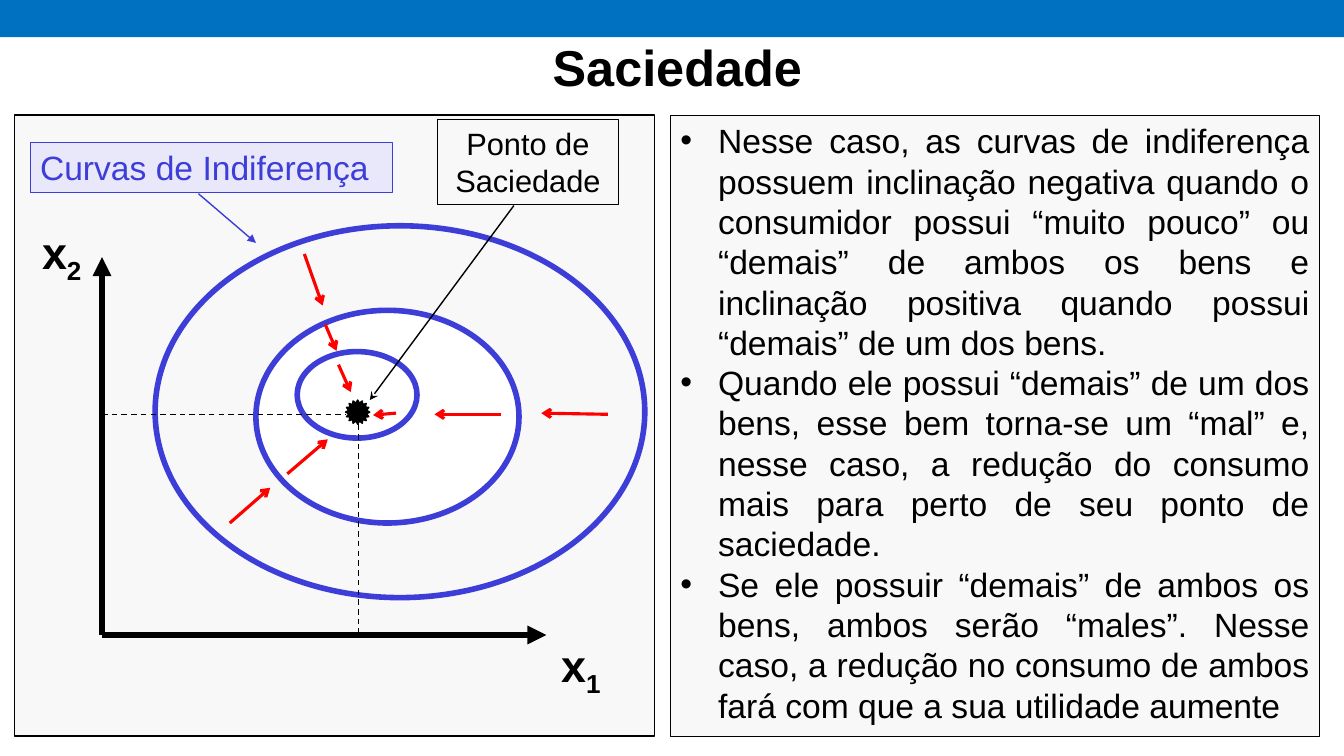
from dataclasses import dataclass

from lxml import etree
from pptx import Presentation
from pptx.dml.color import RGBColor
from pptx.enum.dml import MSO_LINE
from pptx.enum.shapes import MSO_CONNECTOR, MSO_SHAPE
from pptx.enum.text import MSO_ANCHOR, MSO_AUTO_SIZE, PP_ALIGN
from pptx.oxml.ns import qn
from pptx.util import Cm, Pt

RECT, OVAL, STAR = MSO_SHAPE.RECTANGLE, MSO_SHAPE.OVAL, MSO_SHAPE.STAR_16_POINT
STRAIGHT = MSO_CONNECTOR.STRAIGHT
DASH = MSO_LINE.DASH
TOP, MIDDLE, BOTTOM = MSO_ANCHOR.TOP, MSO_ANCHOR.MIDDLE, MSO_ANCHOR.BOTTOM
LEFT, CENTER, JUSTIFY = PP_ALIGN.LEFT, PP_ALIGN.CENTER, PP_ALIGN.JUSTIFY
FIXED = MSO_AUTO_SIZE.NONE


@dataclass(frozen=True)
class Theme:
    font: str = "Arial"
    ink: str = "000000"
    white: str = "FFFFFF"
    bar: str = "0070C0"
    panel: str = "F8F8F8"
    curve: str = "3D3DD7"
    tint: str = "E8E8FA"
    red: str = "FF0000"
    title: int = 36
    axis: int = 32
    body: int = 24
    note: int = 22


THEME = Theme()

POINTS = [
    "Nesse caso, as curvas de indiferença possuem inclinação negativa quando o "
    "consumidor possui “muito pouco” ou “demais” de ambos os bens e inclinação "
    "positiva quando possui “demais” de um dos bens.",
    "Quando ele possui “demais” de um dos bens, esse bem torna-se um “mal” e, nesse "
    "caso, a redução do consumo mais para perto de seu ponto de saciedade.",
    "Se ele possuir “demais” de ambos os bens, ambos serão “males”. Nesse caso, a "
    "redução no consumo de ambos fará com que a sua utilidade aumente",
]

# Start and end of each arrow that leads to the satiation point, in cm
PULLS = [
    ((5.79, 13.18), (6.81, 12.29)),
    ((7.24, 11.94), (8.26, 11.07)),
    ((12.62, 10.44), (10.95, 10.44)),
    ((15.32, 10.44), (13.64, 10.41)),
    ((7.67, 6.4), (8.13, 7.7)),
    ((8.2, 8.18), (8.48, 8.84)),
    ((8.53, 9.19), (8.84, 9.88)),
    ((9.98, 10.41), (9.4, 10.46)),
]


def rgb(code):
    return RGBColor.from_string(code)


def paint(shape, fill, line, width):
    """Set fill and outline; None leaves either one out."""
    if fill:
        shape.fill.solid()
        shape.fill.fore_color.rgb = rgb(fill)
    else:
        shape.fill.background()
    if line:
        shape.line.color.rgb = rgb(line)
        shape.line.width = Pt(width)
    else:
        shape.line.fill.background()


def add_form(slide, kind, box, fill=None, line=None, width=1):
    shape = slide.shapes.add_shape(kind, *map(Cm, box))
    shape.shadow.inherit = False
    paint(shape, fill, line, width)
    return shape


def write(shape, text, size, color=THEME.ink, align=LEFT, anchor=MIDDLE, bold=False):
    frame = shape.text_frame
    frame.text = text
    frame.word_wrap = True
    frame.auto_size = FIXED
    frame.vertical_anchor = anchor
    for para in frame.paragraphs:
        para.alignment = align
        para.space_before = Pt(0)
        for run in para.runs:
            style(run.font, size, color, bold)


def style(font, size, color, bold):
    font.name = THEME.font
    font.size = Pt(size)
    font.bold = bold
    font.color.rgb = rgb(color)


def place(shape, box):
    shape.left, shape.top, shape.width, shape.height = map(Cm, box)


def add_line(slide, start, end, color, width, tip=None, dash=None):
    line = slide.shapes.add_connector(STRAIGHT, *map(Cm, start + end))
    line.line.color.rgb = rgb(color)
    line.line.width = Pt(width)
    if dash:
        line.line.dash_style = dash
    props = line._element.spPr
    if tip:
        etree.SubElement(props.find(qn("a:ln")), qn("a:tailEnd"), type=tip)
    etree.SubElement(props, qn("a:effectLst"))


def add_axis(slide, end, index, spot):
    """Draw an axis from the origin and its name with a subscript."""
    add_line(slide, (2.57, 16), end, THEME.ink, 4.5, "triangle")
    box = slide.shapes.add_textbox(*map(Cm, spot + (1.57, 1.63)))
    write(box, "x", THEME.axis, anchor=TOP, bold=True)
    box.text_frame.word_wrap = False
    sub = box.text_frame.paragraphs[0].add_run()
    sub.text = index
    style(sub.font, THEME.axis, THEME.ink, True)
    sub._r.get_or_add_rPr().set("baseline", "-25000")


def add_graph(slide):
    ink, blue = THEME.ink, THEME.curve
    add_form(slide, RECT, (0.36, 2.9, 16.13, 15.65), THEME.panel, ink)
    add_form(slide, OVAL, (6.45, 7.82, 6.63, 5.36), THEME.white, blue, 4)
    add_form(slide, OVAL, (7.49, 8.86, 3.02, 2.18), THEME.white, blue, 4)
    add_axis(slide, (2.57, 6.48), "2", (0.81, 5.54))
    add_axis(slide, (13.77, 16), "1", (13.89, 15.95))
    star = add_form(slide, STAR, (8.71, 10.08, 0.61, 0.61), ink, ink)
    star.adjustments[0] = 0.375
    add_form(slide, OVAL, (3.91, 5.69, 12.34, 9.37), None, blue, 4)

    point = add_form(slide, RECT, (11.02, 3.02, 4.57, 2.13), THEME.panel, ink, 0.75)
    write(point, "Ponto de Saciedade", THEME.note, align=CENTER)
    add_line(slide, (12.95, 5.18), (9.32, 10.08), ink, 1, "stealth")
    curves = add_form(slide, RECT, (0.76, 3.58, 9.14, 1.27), THEME.tint, blue, 0.75)
    write(curves, "Curvas de Indiferença", THEME.body, blue)
    add_line(slide, (5, 4.88), (6.45, 6.12), blue, 1, "triangle")

    add_line(slide, (2.57, 10.44), (8.71, 10.44), ink, 1, dash=DASH)
    add_line(slide, (9.04, 10.69), (9.04, 16), ink, 1, dash=DASH)
    for start, end in PULLS:
        add_line(slide, start, end, THEME.red, 2.25, "arrow")


def main():
    deck = Presentation()
    deck.slide_width, deck.slide_height = Cm(33.87), Cm(19.05)
    slide = deck.slides.add_slide(deck.slide_layouts[1])
    title, body = slide.placeholders

    add_form(slide, RECT, (0, 0, 33.87, 0.94), THEME.bar)
    place(title, (2.54, 0.38, 29.06, 2.18))
    write(title, "Saciedade", THEME.title, align=CENTER, anchor=BOTTOM, bold=True)
    place(body, (16.89, 2.9, 16.36, 15.65))
    paint(body, THEME.panel, THEME.ink, 0.75)
    write(body, "\n".join(POINTS), THEME.body, align=JUSTIFY, anchor=TOP)
    add_graph(slide)
    deck.save("out.pptx")


if __name__ == "__main__":
    main()
